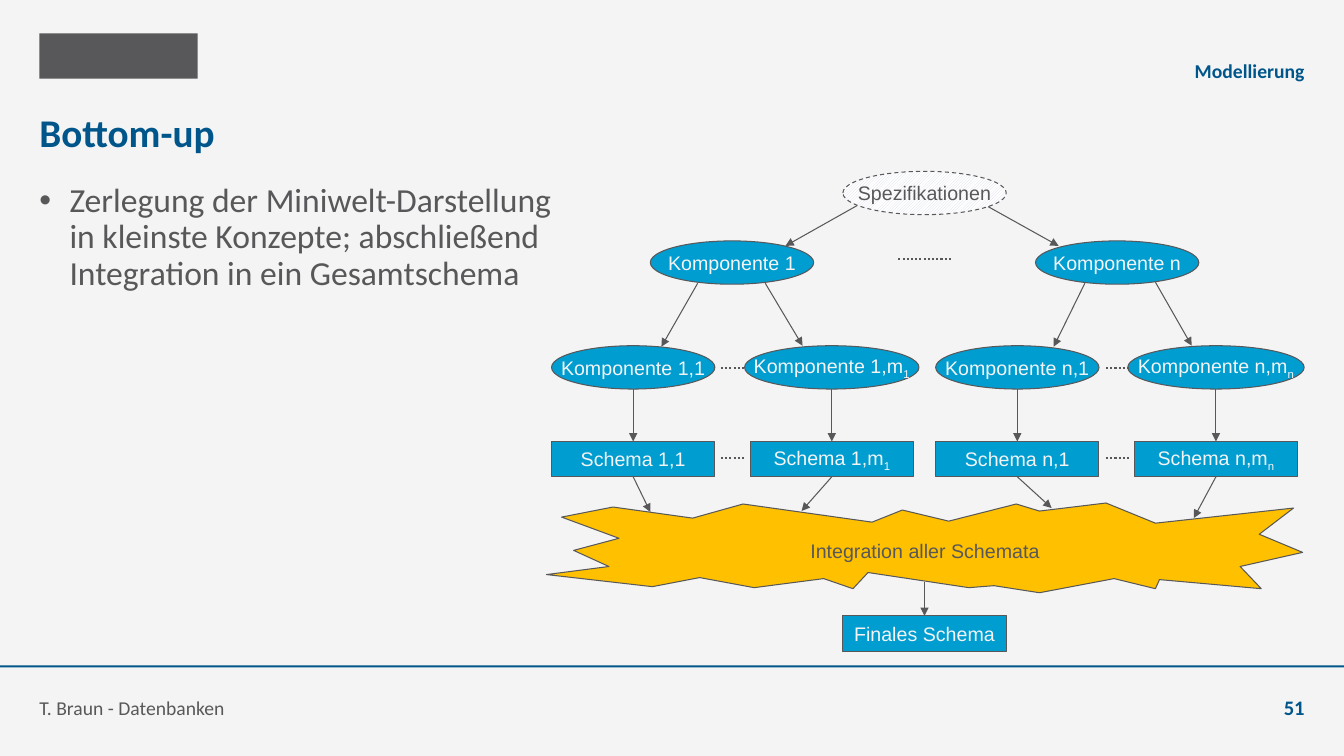
"""Build the slide on bottom-up modelling."""
from lxml import etree
from pptx import Presentation, util as u
from pptx.dml.color import RGBColor
from pptx.enum import dml, shapes, text
from pptx.oxml.ns import qn

BLUE, GREY, LIGHT, CYAN, AMBER = "00568A", "58585A", "F4F4F4", "009DD1", "FFC000"
ELLIPSE, RECTANGLE = shapes.MSO_SHAPE.OVAL, shapes.MSO_SHAPE.RECTANGLE
LEFT, CENTER, RIGHT = text.PP_ALIGN.LEFT, text.PP_ALIGN.CENTER, text.PP_ALIGN.RIGHT
TOP, MIDDLE, BOTTOM = text.MSO_ANCHOR.TOP, text.MSO_ANCHOR.MIDDLE, text.MSO_ANCHOR.BOTTOM


def color(value):
    return RGBColor.from_string(value)


def write(shape, words, hue, frame_format, align=CENTER, subscript="", **font_format):
    frame = shape.text_frame
    for name, value in frame_format.items():
        setattr(frame, name, value)
    paragraph = frame.paragraphs[0]
    paragraph.alignment = align
    for content in filter(None, (words, subscript)):
        run = paragraph.add_run()
        run.text = content
        for name, value in {"name": "Arial", "size": u.Pt(14), **font_format}.items():
            setattr(run.font, name, value)
        run.font.color.rgb = color(hue)
    if subscript:
        run._r.get_or_add_rPr().set("baseline", "-25000")
    return paragraph


presentation = Presentation()
presentation.slide_width, presentation.slide_height = u.Inches(13.33), u.Inches(7.5)
slide = presentation.slides.add_slide(presentation.slide_layouts[6])
slide.background.fill.solid()
slide.background.fill.fore_color.rgb = color(LIGHT)

for box, hue in [((0.39, 0.33, 1.57, 0.45), GREY), ((0, 6.6, 13.33, 0.02), BLUE)]:
    bar = slide.shapes.add_shape(RECTANGLE, *map(u.Inches, box))
    bar.shadow.inherit = False
    bar.fill.solid()
    bar.fill.fore_color.rgb = color(hue)
    bar.line.fill.background()

no_margins = dict.fromkeys(["margin_left", "margin_top", "margin_right", "margin_bottom"], 0)
for box, words, hue, size, bold, align, anchor in [
    ((0.39, 0.99, 12.55, 0.63), "Bottom-up", BLUE, 28, True, LEFT, MIDDLE),
    ((12.15, 6.75, 0.79, 0.39), "51", BLUE, 14.7, True, RIGHT, BOTTOM),
    ((3.93, 0.43, 9.01, 0.39), "Modellierung", BLUE, 14, True, RIGHT, BOTTOM),
    ((0.39, 6.75, 9.2, 0.39), "T. Braun - Datenbanken", GREY, 14, False, LEFT, BOTTOM),
    ((0.39, 1.82, 5.34, 4.64), "Zerlegung der Miniwelt-Darstellung in kleinste Konzepte; "
     "abschließend Integration in ein Gesamtschema", GREY, 24, False, LEFT, TOP),
]:
    label = slide.shapes.add_textbox(*map(u.Inches, box))
    frame_format = {**no_margins, "word_wrap": True, "vertical_anchor": anchor}
    paragraph = write(label, words, hue, frame_format, align,
                      name="Calibri", size=u.Pt(size), bold=bold)

paragraph.line_spacing, paragraph.space_before = 0.9, u.Pt(5)
properties = paragraph._p.get_or_add_pPr()
properties.set("marL", str(u.Inches(0.3)))
properties.set("indent", str(u.Inches(-0.3)))
etree.SubElement(properties, qn("a:buFont"), typeface="Arial")
etree.SubElement(properties, qn("a:buChar"), char="•")

burst_points = [
    (6.08, 5.03), (6.87, 5.14), (7.37, 5), (8.65, 5.18), (8.95, 5.06), (9.41, 5.17),
    (10.08, 5), (10.31, 5.07), (10.97, 4.99), (11.46, 5.19), (12.83, 5.04), (12.49, 5.3),
    (12.92, 5.48), (12.3, 5.62), (12.51, 5.84), (11.5, 5.75), (11.46, 5.84), (11.05, 5.74),
    (10.31, 5.88), (9.86, 5.81), (9.61, 5.83), (8.61, 5.68), (8.46, 5.84), (8.17, 5.74),
    (7.48, 5.83), (6.94, 5.73), (6.47, 5.82), (5.42, 5.7), (6.04, 5.62), (5.69, 5.46),
    (6.14, 5.34), (5.57, 5.13),
]
points = [(u.Inches(x), u.Inches(y)) for x, y in burst_points]
builder = slide.shapes.build_freeform(*points[0])
builder.add_line_segments(points[1:], close=True)
burst = builder.convert_to_shape()
burst.shadow.inherit = False
burst.fill.solid()
burst.fill.fore_color.rgb = color(AMBER)
burst.line.color.rgb = color(GREY)
burst.line.width = u.Pt(0.75)

nodes = [
    (ELLIPSE, 9.17, 1.7, 1.62, "Spezifikationen", ""),
    (ELLIPSE, 7.26, 2.39, 1.62, "Komponente 1", ""),
    (ELLIPSE, 11.08, 2.39, 1.62, "Komponente n", ""),
    (RECTANGLE, 9.17, 6.11, 1.62, "Finales Schema", ""),
]
columns = [(6.28, 1.62, "1,1", ""), (8.25, 1.73, "1,m", "1"),
           (10.09, 1.62, "n,1", ""), (12.06, 1.75, "n,m", "n")]
for center, width, index, subscript in columns:
    nodes.append((ELLIPSE, center, 3.43, width, f"Komponente {index}", subscript))
    nodes.append((RECTANGLE, center, 4.38, 1.62, f"Schema {index}", subscript))

centered = {"word_wrap": False, "vertical_anchor": MIDDLE}
for kind, center, top, width, words, subscript in nodes:
    height = 0.43 if kind == ELLIPSE else 0.35
    node = slide.shapes.add_shape(kind, *map(u.Inches, (center - width / 2, top, width, height)))
    node.shadow.inherit = False
    node.line.color.rgb = color(GREY)
    node.line.width = u.Pt(0.75)
    if words == "Spezifikationen":
        node.fill.patterned()
        node.fill.pattern = dml.MSO_PATTERN.LIGHT_UPWARD_DIAGONAL
        node.fill.fore_color.rgb, node.fill.back_color.rgb = color("D8DBE8"), color("FFFFFF")
        node.line.dash_style = dml.MSO_LINE.DASH
        write(node, words, GREY, centered)
    else:
        node.fill.solid()
        node.fill.fore_color.rgb = color(CYAN)
        write(node, words, LIGHT, centered, subscript=subscript)

burst_label = slide.shapes.add_textbox(*map(u.Inches, (7.93, 5.3, 2.49, 0.34)))
write(burst_label, "Integration aller Schemata", GREY, {"word_wrap": False})

arrows = [
    (8.5, 2.04, 7.79, 2.44), (9.8, 2.05, 10.5, 2.44),
    (6.92, 2.81, 6.56, 3.44), (7.59, 2.81, 7.96, 3.43),
    (10.76, 2.81, 10.45, 3.44), (11.46, 2.8, 11.82, 3.43),
    (9.17, 5.77, 9.17, 6.11),
]
burst_tips = [(6.45, 5.08), (7.95, 5.07), (10.43, 5.04), (11.84, 5.14)]
for (center, *_), tip in zip(columns, burst_tips):
    arrows += [(center, 3.86, center, 4.38), (center, 4.73, *tip)]
dots = [(8.91, 2.57, 9.44, 2.57)]
dots += [(x, y, x + 0.23, y) for x in (7.15, 10.97) for y in (3.65, 4.54)]

for ends in arrows + dots:
    connector = slide.shapes.add_connector(shapes.MSO_CONNECTOR.STRAIGHT, *map(u.Inches, ends))
    connector.line.color.rgb = color(GREY)
    if ends in dots:
        connector.line.width = u.Pt(1.5)
        connector.line.dash_style = dml.MSO_LINE.ROUND_DOT
    else:
        connector.line.width = u.Pt(0.75)
        etree.SubElement(connector.line._get_or_add_ln(), qn("a:tailEnd"), type="triangle")
    etree.SubElement(connector._element.spPr, qn("a:effectLst"))

presentation.save("out.pptx")
